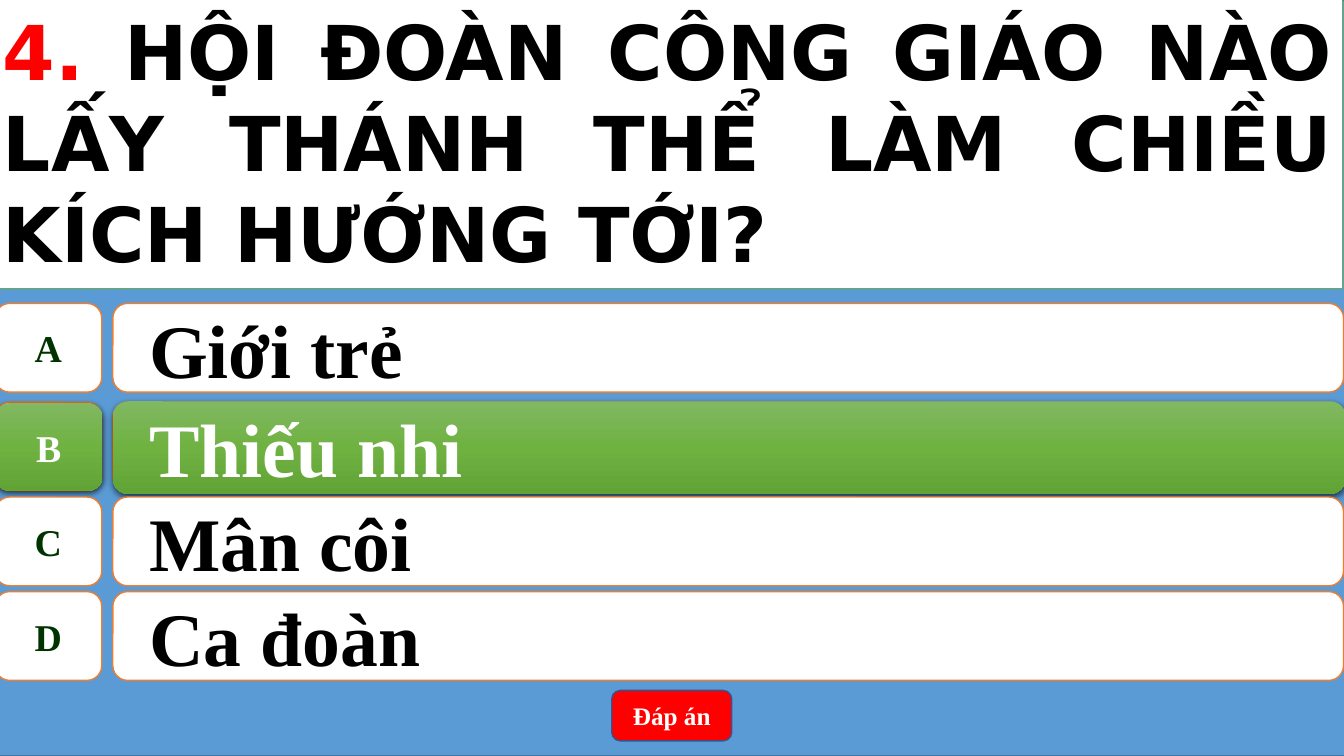
import copy
from dataclasses import dataclass
from typing import Optional

import lxml.etree
import pptx
import pptx.dml.color
import pptx.enum.shapes
import pptx.enum.text
import pptx.oxml
import pptx.oxml.ns
import pptx.util

Pt = pptx.util.Pt
Shape = pptx.enum.shapes.MSO_SHAPE
Align = pptx.enum.text.PP_ALIGN


@dataclass(frozen=True)
class Theme:
    backdrop: str = "5B9BD5"
    backdrop_line: str = "43739E"
    plate: str = "FFFFFF"
    plate_line: str = "ED7D31"
    question_line: str = "70AD47"
    button: str = "FF0000"
    button_line: str = "325491"
    number: str = "FF0000"
    ink: str = "000000"
    letter: str = "003300"
    light: str = "FFFFFF"
    correct: tuple[str, ...] = ("81B861", "6FB242", "62A336")
    serif: str = "Times New Roman"
    sans: str = "DejaVu Sans"
    large: float = 54
    medium: float = 27
    small: float = 18


@dataclass(frozen=True)
class Box:
    left: float
    top: float
    width: float
    height: float


@dataclass(frozen=True)
class Answer:
    letter: str
    wording: str
    top: float
    correct: bool = False


THEME = Theme()
ROW_HEIGHT = 63.4
LETTER_LEFT, LETTER_WIDTH = -3.6, 76.3
WORDING_LEFT, WORDING_WIDTH = 80.6, 879.1
ANSWERS = [
    Answer("A", "Giới trẻ", 216.7),
    Answer("B", "Thiếu nhi", 287.3, correct=True),
    Answer("C", "Mân côi", 355),
    Answer("D", "Ca đoàn", 422.6),
]


def rgb(value: str) -> pptx.dml.color.RGBColor:
    return pptx.dml.color.RGBColor.from_string(value)


def add_box(page, kind, box: Box, fill: Optional[str], line: Optional[str]):
    """Add a shadowless shape; None leaves out the fill or line."""
    shape = page.shapes.add_shape(
        kind, Pt(box.left), Pt(box.top), Pt(box.width), Pt(box.height))
    shape.shadow.inherit = False
    if fill:
        shape.fill.solid()
        shape.fill.fore_color.rgb = rgb(fill)
    if line:
        shape.line.color.rgb = rgb(line)
        shape.line.width = Pt(1)
    else:
        shape.line.fill.background()
    return shape


def write(shape, spans: list[tuple[str, str]], font: str, size: float,
          align: Align = Align.CENTER, wrap: bool = True):
    """Fill a shape with one bold paragraph of (text, colour) spans."""
    frame = shape.text_frame
    frame.word_wrap = wrap
    frame.vertical_anchor = pptx.enum.text.MSO_ANCHOR.MIDDLE
    para = frame.paragraphs[0]
    para.alignment = align
    para.font.name, para.font.size, para.font.bold = font, Pt(size), True
    for text, colour in spans:
        span = para.add_run()
        span.text = text
        span.font.color.rgb = rgb(colour)
    return para


def mark_correct(shape) -> None:
    """Give a shape the green gradient and a soft shadow below."""
    shape.fill.gradient()
    shape.fill.gradient_angle = 270
    properties = shape.element.spPr
    stops = properties.find(".//" + pptx.oxml.ns.qn("a:gsLst"))
    stops.insert(1, copy.deepcopy(stops[0]))
    for stop, position, colour in zip(shape.fill.gradient_stops, (0, 0.5, 1), THEME.correct):
        stop.position = position
        stop.color.rgb = rgb(colour)
    effects = properties.find(pptx.oxml.ns.qn("a:effectLst"))
    effects.append(pptx.oxml.parse_xml(
        f'<a:outerShdw {pptx.oxml.ns.nsdecls("a")} blurRad="{Pt(4.5)}" dist="{Pt(1.5)}" '
        'dir="5400000" algn="ctr" rotWithShape="0">'
        '<a:srgbClr val="000000"><a:alpha val="63000"/></a:srgbClr></a:outerShdw>'))


def add_plates(page, letter_box: Box, wording_box: Box, fill: Optional[str],
               line: Optional[str]):
    return (add_box(page, Shape.FLOWCHART_ALTERNATE_PROCESS, letter_box, fill, line),
            add_box(page, Shape.ROUNDED_RECTANGLE, wording_box, fill, line))


def add_answer(page, answer: Answer) -> None:
    letter_box = Box(LETTER_LEFT, answer.top, LETTER_WIDTH, ROW_HEIGHT)
    wording_box = Box(WORDING_LEFT, answer.top, WORDING_WIDTH, ROW_HEIGHT)
    plates = add_plates(page, letter_box, wording_box, THEME.plate, THEME.plate_line)
    letter_colour, wording_colour = THEME.letter, THEME.ink
    if answer.correct:
        # The green plates leave the rim of the white ones in view
        letter_box = Box(LETTER_LEFT, answer.top + 0.7, 77, 62.6)
        wording_box = Box(WORDING_LEFT, answer.top - 0.7, 880.6, 66.2)
        plates = add_plates(page, letter_box, wording_box, None, None)
        for plate in plates:
            mark_correct(plate)
        letter_colour = wording_colour = THEME.light
    letter, wording = plates
    write(letter, [(answer.letter, letter_colour)], THEME.serif, THEME.medium, wrap=False)
    para = write(wording, [(answer.wording, wording_colour)], THEME.serif, THEME.large,
                 Align.LEFT)
    indents = para._p.get_or_add_pPr()
    indents.set("marL", str(Pt(36)))
    indents.set("indent", str(Pt(-20.2)))
    para.level = 1


def main() -> None:
    deck = pptx.Presentation()
    deck.slide_width, deck.slide_height = Pt(960), Pt(540)
    page = deck.slides.add_slide(deck.slide_layouts[6])

    # Blue backdrop
    add_box(page, Shape.RECTANGLE, Box(-3.6, 0, 964, 540),
            THEME.backdrop, THEME.backdrop_line)

    # Answer button
    button = add_box(page, Shape.ROUNDED_RECTANGLE, Box(437, 493.2, 85.7, 36),
                     THEME.button, THEME.button_line)
    write(button, [("Đáp án", THEME.light)], THEME.serif, THEME.small)

    # Answers
    for answer in ANSWERS:
        add_answer(page, answer)

    # Question
    question = add_box(page, Shape.RECTANGLE, Box(-5, -5, 964, 211),
                       THEME.plate, THEME.question_line)
    para = write(question, [
        ("4. ", THEME.number),
        ("HỘI ĐOÀN CÔNG GIÁO NÀO LẤY THÁNH THỂ LÀM CHIỀU KÍCH HƯỚNG TỚI?", THEME.ink),
    ], THEME.sans, THEME.large, Align.JUSTIFY)
    para.line_spacing = Pt(65)

    deck.save("out.pptx")


if __name__ == "__main__":
    main()
